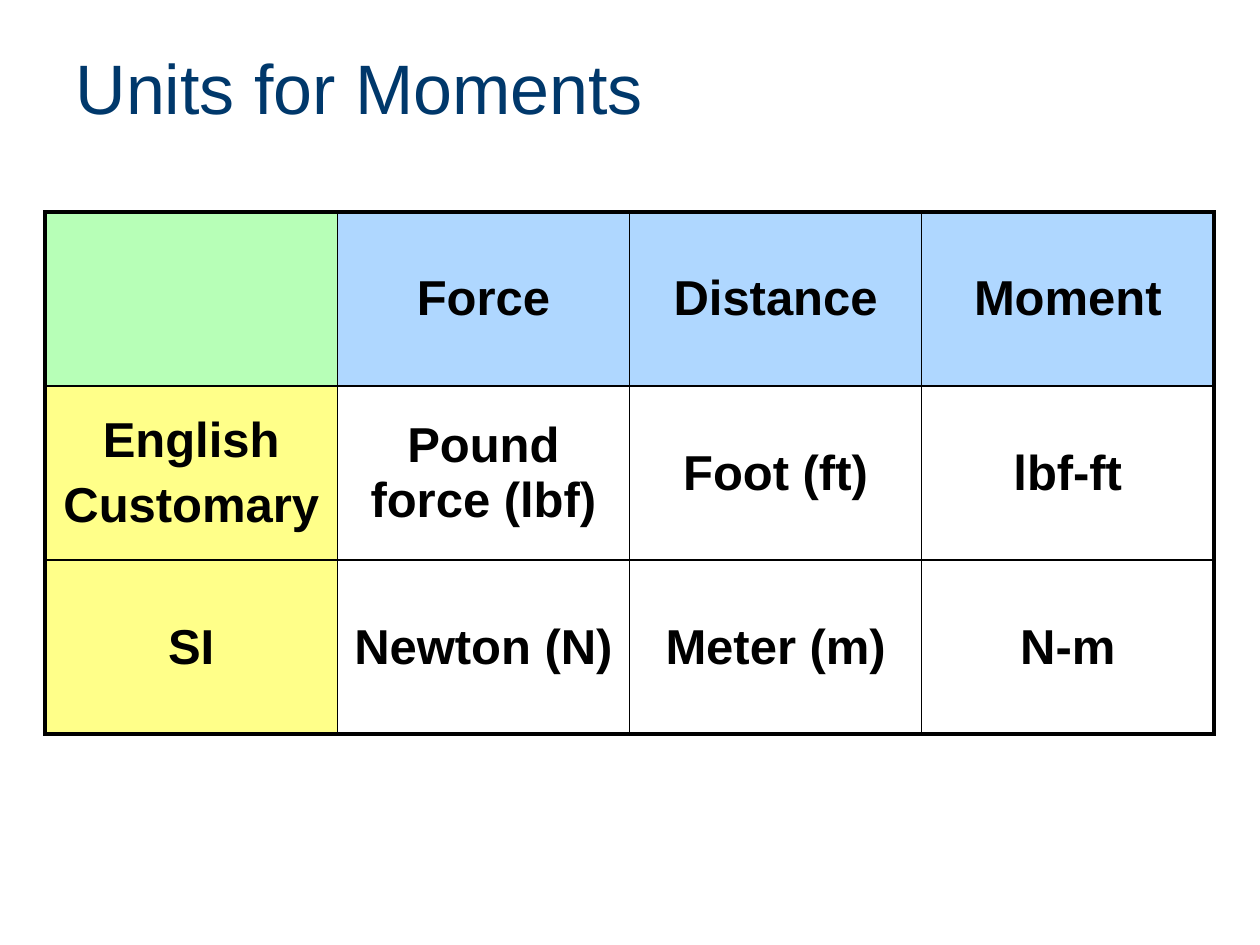
from dataclasses import dataclass
from typing import Optional

from lxml import etree
from pptx import Presentation
from pptx.dml.color import RGBColor
from pptx.enum import text
from pptx.oxml import ns
from pptx.util import Cm, Pt

FONT = "Arial"
NAVY = RGBColor(0x00, 0x38, 0x6B)
BLACK = RGBColor(0x00, 0x00, 0x00)
GREEN = RGBColor(0xB7, 0xFF, 0xB7)
BLUE = RGBColor(0xAF, 0xD7, 0xFF)
YELLOW = RGBColor(0xFF, 0xFF, 0x89)

OUTER_BORDER = Pt(2.25)
INNER_BORDER = Pt(1)
COLUMN_WIDTH = Cm(5.89)
ROW_HEIGHT = Cm(3.51)


@dataclass(frozen=True)
class UnitCell:
    text: str
    fill: Optional[RGBColor] = None


UNIT_ROWS = [
    [UnitCell("", GREEN), UnitCell("Force", BLUE),
     UnitCell("Distance", BLUE), UnitCell("Moment", BLUE)],
    [UnitCell("English\nCustomary", YELLOW), UnitCell("Pound force (lbf)"),
     UnitCell("Foot (ft)"), UnitCell("lbf-ft")],
    [UnitCell("SI", YELLOW), UnitCell("Newton (N)"),
     UnitCell("Meter (m)"), UnitCell("N-m")],
]


def format_run(run, size: float, color: RGBColor, bold: bool) -> None:
    run.font.name = FONT
    run.font.size = Pt(size)
    run.font.bold = bold
    run.font.color.rgb = color


def add_title(slide, title: str) -> None:
    shape = slide.shapes.title
    shape.left, shape.top, shape.width, shape.height = (
        Cm(1.27), Cm(0.76), Cm(22.86), Cm(1.98))
    frame = shape.text_frame
    frame.text = title
    frame.vertical_anchor = text.MSO_ANCHOR.MIDDLE
    paragraph = frame.paragraphs[0]
    paragraph.alignment = text.PP_ALIGN.LEFT
    format_run(paragraph.runs[0], 40, NAVY, False)


def set_borders(cell, outer_sides: dict[str, bool]) -> None:
    """Draw thick lines on the table's outer sides; call before filling the cell."""
    properties = cell._tc.get_or_add_tcPr()
    for side, is_outer in outer_sides.items():
        width = OUTER_BORDER if is_outer else INNER_BORDER
        line = etree.SubElement(properties, ns.qn(f"a:ln{side}"), w=str(width))
        fill = etree.SubElement(line, ns.qn("a:solidFill"))
        etree.SubElement(fill, ns.qn("a:srgbClr"), val=str(BLACK))


def format_cell(cell, unit: UnitCell) -> None:
    cell.text_frame.text = unit.text
    cell.vertical_anchor = text.MSO_ANCHOR.MIDDLE
    if unit.fill is None:
        cell.fill.background()
    else:
        cell.fill.solid()
        cell.fill.fore_color.rgb = unit.fill
    for paragraph in cell.text_frame.paragraphs:
        paragraph.alignment = text.PP_ALIGN.CENTER
        paragraph.space_before = Pt(5.6)
        for run in paragraph.runs:
            format_run(run, 28, BLACK, True)


def add_unit_table(slide, rows: list[list[UnitCell]]) -> None:
    row_count, column_count = len(rows), len(rows[0])
    table = slide.shapes.add_table(
        row_count, column_count, Cm(0.91), Cm(4.27),
        COLUMN_WIDTH * column_count, ROW_HEIGHT * row_count).table
    table.first_row = False
    table.horz_banding = False
    for row_index, row in enumerate(rows):
        for column_index, unit in enumerate(row):
            cell = table.cell(row_index, column_index)
            set_borders(cell, {
                "L": column_index == 0,
                "R": column_index == column_count - 1,
                "T": row_index == 0,
                "B": row_index == row_count - 1,
            })
            format_cell(cell, unit)


def main() -> None:
    presentation = Presentation()
    presentation.slide_width = Cm(25.4)
    presentation.slide_height = Cm(19.05)
    slide = presentation.slides.add_slide(presentation.slide_layouts[5])
    add_unit_table(slide, UNIT_ROWS)
    add_title(slide, "Units for Moments")
    presentation.save("out.pptx")


if __name__ == "__main__":
    main()
